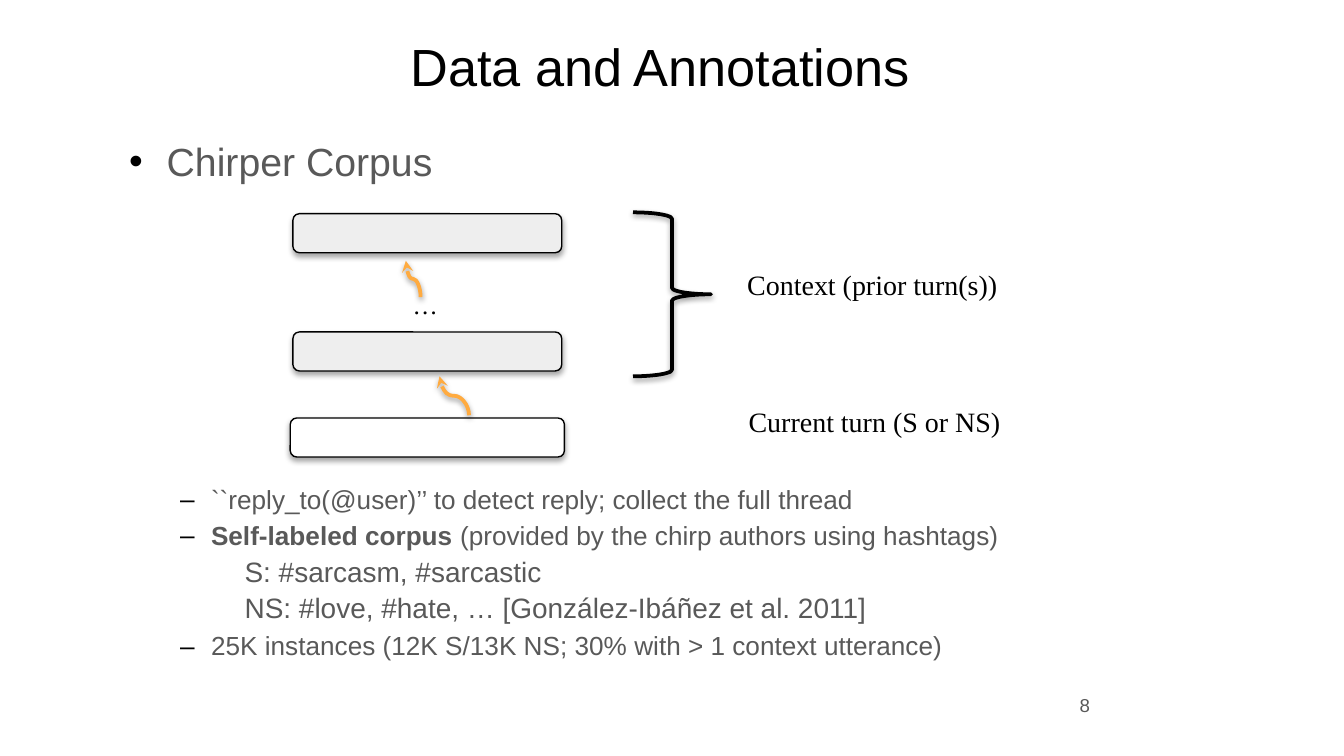
import lxml.etree
import pptx
import pptx.dml.color
import pptx.enum.shapes
import pptx.enum.text
import pptx.oxml.ns
import pptx.util

WIDTH, HEIGHT = pptx.util.Inches(10), pptx.util.Inches(5.625)
SANS, SERIF = "Arial", "Times New Roman"
BLACK, GREY, ORANGE = "000000", "595959", "FFAB40"
ALIGN = pptx.enum.text.PP_ALIGN
ANCHOR = pptx.enum.text.MSO_ANCHOR
SHAPE = pptx.enum.shapes.MSO_SHAPE
qn = pptx.oxml.ns.qn


def rgb(value):
    return pptx.dml.color.RGBColor.from_string(value)


def across(share):
    """Percent of the slide's width as a length."""
    return round(WIDTH * share / 100)


def down(share):
    """Percent of the slide's height as a length."""
    return round(HEIGHT * share / 100)


def place(x, y, w, h):
    return across(x), down(y), across(w), down(h)


def child(parent, tag, **attrs):
    el = lxml.etree.SubElement(parent, qn(tag))
    for name, value in attrs.items():
        el.set(name, str(value))
    return el


def add_shadow(sp, distance=1.6, alpha=38):
    """Soft shadow straight below; distance in points, alpha in percent."""
    effects = child(sp._element.spPr, "a:effectLst")
    shadow = child(effects, "a:outerShdw", blurRad=pptx.util.Pt(3.1),
                   dist=pptx.util.Pt(distance), dir=90 * 60000,
                   algn="ctr", rotWithShape=0)
    child(child(shadow, "a:srgbClr", val=BLACK), "a:alpha", val=alpha * 1000)


def add_frame(s, box, anchor=ANCHOR.TOP):
    """Empty text box; gives its text frame."""
    tf = s.shapes.add_textbox(*place(*box)).text_frame
    tf.word_wrap = True
    tf.vertical_anchor = anchor
    tf.margin_left = tf.margin_right = pptx.util.Inches(0.07)
    tf.margin_top = tf.margin_bottom = pptx.util.Inches(0.04)
    return tf


def add_run(p, text, size, font, color, bold=False):
    r = p.add_run()
    r.text = text
    r.font.size = pptx.util.Pt(size)
    r.font.name = font
    r.font.bold = bold
    r.font.color.rgb = rgb(color)


def add_label(s, box, text, size, font=SERIF, color=BLACK,
              align=ALIGN.LEFT, anchor=ANCHOR.TOP):
    p = add_frame(s, box, anchor).paragraphs[0]
    p.alignment = align
    add_run(p, text, size, font, color)


def format_item(p, margin, hang=0, bullet=None, before=0):
    """Indents in inches, space before in points."""
    p.line_spacing = 0.9
    p.space_before = pptx.util.Pt(before)
    pPr = p._p.get_or_add_pPr()
    pPr.set("marL", str(pptx.util.Inches(margin)))
    pPr.set("indent", str(pptx.util.Inches(-hang)))
    if bullet:
        child(child(pPr, "a:buClr"), "a:srgbClr", val=BLACK)
        child(pPr, "a:buFont", typeface=SANS)
        child(pPr, "a:buChar", char=bullet)


def add_details(s, box, items):
    """Dashed points, and plain lines one step further in."""
    tf = add_frame(s, box)
    for i, (dashed, runs) in enumerate(items):
        p = tf.add_paragraph() if i else tf.paragraphs[0]
        if dashed:
            format_item(p, 0.61, 0.23, "–", 4.5 if i else 0)
        else:
            format_item(p, 0.86, before=3.5)
        for text, bold in runs:
            add_run(p, text, 14 if dashed else 15, SANS, GREY, bold)


def add_turn(s, box, fill):
    sp = s.shapes.add_shape(SHAPE.ROUNDED_RECTANGLE, *place(*box))
    sp.fill.solid()
    sp.fill.fore_color.rgb = rgb(fill)
    sp.line.color.rgb = rgb(BLACK)
    sp.line.width = pptx.util.Pt(0.75)
    add_shadow(sp, 1.8, 35)


def add_brace(s, box):
    sp = s.shapes.add_shape(SHAPE.RIGHT_BRACE, *place(*box))
    sp.fill.background()
    sp.line.color.rgb = rgb(BLACK)
    sp.line.width = pptx.util.Pt(2)
    add_shadow(sp)


def add_reply_arrow(s, start, end):
    """Curve that leaves upwards: a sideways curve turned a quarter."""
    x1, y1 = across(start[0]), down(start[1])
    x2, y2 = across(end[0]), down(end[1])
    mid_x, mid_y = (x1 + x2) // 2, (y1 + y2) // 2
    half_w, half_h = (y1 - y2) // 2, (x1 - x2) // 2
    cx = s.shapes.add_connector(
        pptx.enum.shapes.MSO_CONNECTOR.CURVE,
        mid_x + half_w, mid_y - half_h, mid_x - half_w, mid_y + half_h)
    spPr = cx._element.spPr
    spPr.find(qn("a:xfrm")).set("rot", str(90 * 60000))
    cx.line.color.rgb = rgb(ORANGE)
    cx.line.width = pptx.util.Pt(2)
    child(spPr.find(qn("a:ln")), "a:tailEnd", type="stealth")
    add_shadow(cx)


def main():
    prs = pptx.Presentation()
    prs.slide_width, prs.slide_height = WIDTH, HEIGHT
    s = prs.slides.add_slide(prs.slide_layouts[6])

    add_label(s, (17.2, 1.96, 63.8, 13.51), "Data and Annotations", 28, SANS,
              align=ALIGN.CENTER, anchor=ANCHOR.MIDDLE)
    p = add_frame(s, (8.9, 18.13, 82.2, 8)).paragraphs[0]
    format_item(p, 0.28, 0.28, "•")
    add_run(p, "Chirper Corpus", 21, SANS, GREY)

    add_turn(s, (21.6, 55.29, 20.4, 5.16), "FFFFFF")
    for y in (28.27, 43.91):
        add_turn(s, (21.8, y, 20, 5.16), "EEEEEE")
    add_brace(s, (47.1, 28.09, 5.8, 21.69))
    add_reply_arrow(s, (34.9, 54.93), (32.7, 49.78))
    add_reply_arrow(s, (31.3, 39.29), (30.2, 34.49))
    add_label(s, (30, 37.51, 3.5, 5.33), "…", 13.5)
    add_label(s, (54.9, 34.67, 24.7, 5.87), "Context (prior turn(s))", 15)
    add_label(s, (55, 52.8, 23.5, 5.87), "Current turn (S or NS)", 15)

    add_details(s, (8.9, 63.64, 82.2, 28), [
        (True, [("``reply_to(@user)’’ to detect reply; collect the full thread", False)]),
        (True, [("Self-labeled corpus ", True),
                ("(provided by the chirp authors using hashtags)", False)]),
        (False, [("S: #sarcasm, #sarcastic", False)]),
        (False, [("NS: #love, #hate, … [González-Ibáñez et al. 2011]", False)]),
        (True, [("25K instances (12K S/13K NS; 30% with > 1 context utterance)", False)]),
    ])
    add_label(s, (66.2, 91.02, 15.6, 6.76), "8", 10, SANS, GREY, ALIGN.RIGHT)
    prs.save("out.pptx")


if __name__ == "__main__":
    main()
